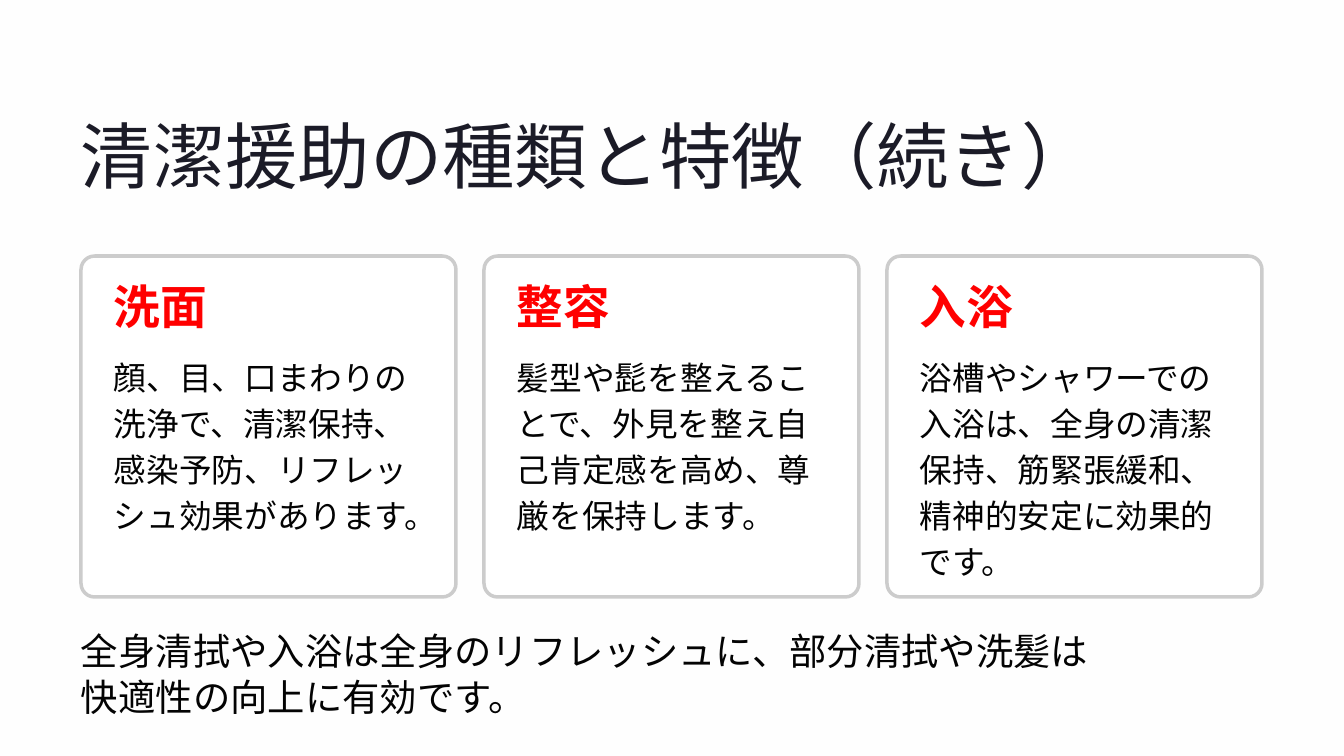
from pptx import Presentation
from pptx.dml.color import RGBColor
from pptx.enum.shapes import MSO_SHAPE
from pptx.enum.text import MSO_ANCHOR, MSO_AUTO_SIZE, PP_ALIGN
from pptx.util import Emu, Pt

COLORS = {
    "background": "FEFEFE",
    "card": "FFFFFF",
    "border": "CCCCCC",
    "title": "1B1B27",
    "heading": "FF0000",
    "body": "030303",
}


def px(*lengths):
    return [Emu(round(length * 914400 / 84)) for length in lengths]


def write(shape, text, size, font, color, spacing, bold=False, wrap=False):
    frame = shape.text_frame
    frame.text = text
    frame.word_wrap = wrap
    frame.auto_size = MSO_AUTO_SIZE.NONE
    frame.vertical_anchor = MSO_ANCHOR.TOP
    frame.margin_left = frame.margin_top = frame.margin_right = frame.margin_bottom = 0
    for paragraph in frame.paragraphs:
        paragraph.alignment = PP_ALIGN.LEFT
        paragraph.line_spacing = Pt(spacing)
        for run in paragraph.runs:
            run.font.name = font
            run.font.size = Pt(size)
            run.font.bold = bold
            run.font.color.rgb = RGBColor.from_string(COLORS[color])


presentation = Presentation()
presentation.slide_width, presentation.slide_height = px(1344, 756)
slide = presentation.slides.add_slide(presentation.slide_layouts[5])
slide.background.fill.solid()
slide.background.fill.fore_color.rgb = RGBColor.from_string(COLORS["background"])

title = slide.shapes.title
title.left, title.top, title.width, title.height = px(81, 108, 1014, 91)
write(title, "清潔援助の種類と特徴（続き）", 62, "Inter", "title", 77.5)

cards = [
    ("洗面", "顔、目、口まわりの洗浄で、清潔保持、感染予防、リフレッシュ効果があります。"),
    ("整容", "髪型や髭を整えることで、外見を整え自己肯定感を高め、尊厳を保持します。"),
    ("入浴", "浴槽やシャワーでの入浴は、全身の清潔保持、筋緊張緩和、精神的安定に効果的です。"),
]
for index, (heading, description) in enumerate(cards):
    left = 81 + index * 403
    card = slide.shapes.add_shape(MSO_SHAPE.ROUNDED_RECTANGLE, *px(left, 256, 375, 341))
    card.adjustments[0] = 0.04
    card.shadow.inherit = False
    card.fill.solid()
    card.fill.fore_color.rgb = RGBColor.from_string(COLORS["card"])
    card.line.color.rgb = RGBColor.from_string(COLORS["border"])
    card.line.width = Pt(3)

    heading_box = slide.shapes.add_textbox(*px(left + 33, 289, 310, 45))
    write(heading_box, heading, 40, "Inter", "heading", 38.5, bold=True)
    description_box = slide.shapes.add_textbox(*px(left + 33, 351, 310, 186))
    write(description_box, description, 28, "Cabin", "body", 39.5, wrap=True)

summary = slide.shapes.add_textbox(*px(81, 627, 1182, 46))
write(
    summary,
    "全身清拭や入浴は全身のリフレッシュに、部分清拭や洗髪は\n快適性の向上に有効です。",
    32, "Cabin", "body", 39.5,
)

presentation.save("out.pptx")
